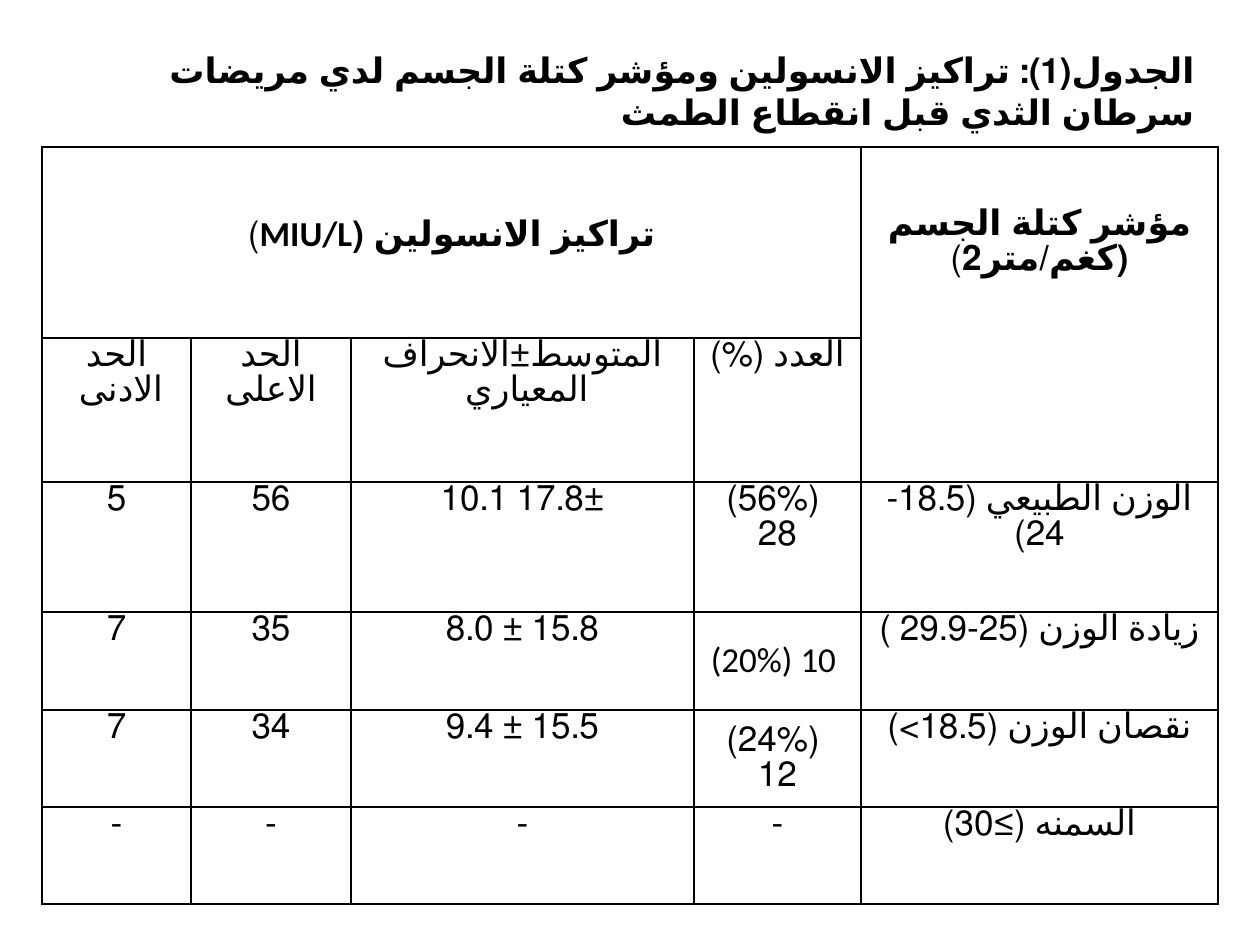
from pptx import Presentation
from pptx.dml.color import RGBColor
from pptx.enum.lang import MSO_LANGUAGE_ID as Language
from pptx.enum.text import MSO_ANCHOR as Anchor, MSO_AUTO_SIZE as AutoSize, PP_ALIGN as Align
from pptx.oxml import parse_xml
from pptx.oxml.ns import nsdecls
from pptx.util import Emu, Pt

BLACK = RGBColor(0x00, 0x00, 0x00)
FONT = "Calibri"
TEXT_SIZE = 20
PX_PER_INCH = 126

TITLE = "الجدول(1): تراكيز الانسولين ومؤشر كتلة الجسم لدي مريضات سرطان الثدي قبل انقطاع الطمث"
INSULIN_HEADER = "تراكيز الانسولين (MIU/L"
BMI_HEADER = "مؤشر كتلة الجسم (كغم/متر2"
LTR_TEXT = "(20%) 10 "
CENTRED_TEXTS = (LTR_TEXT, " (24%) 12")

COLUMN_WIDTHS = [149, 160, 343, 167, 357]
ROW_HEIGHTS = [191, 141, 130, 98, 97, 97]
BODY_ROWS = [
    ["الحد الادنى ", "الحد الاعلى", "المتوسط±الانحراف المعياري ", "العدد (%)", ""],
    ["5", "56", "17.8± 10.1", " (56%) 28", "الوزن الطبيعي (18.5- 24)"],
    ["7", "35", "15.8 ± 8.0", LTR_TEXT, "زيادة الوزن (25-29.9 )"],
    ["7", "34", "15.5 ± 9.4", " (24%) 12", "نقصان الوزن (18.5>)"],
    ["-", "-", "-", "-", "السمنه (≥30)"],
]


def px(length):
    return Emu(round(length * 914400 / PX_PER_INCH))


def style_span(span, bold=False):
    font = span.font
    font.size = Pt(TEXT_SIZE)
    font.name = FONT
    font.bold = bold
    font.color.rgb = BLACK
    font.language_id = Language.ARABIC_IRAQ


def set_rtl(para):
    para._p.get_or_add_pPr().set("rtl", "1")


def add_borders(cell):
    properties = cell._tc.get_or_add_tcPr()
    for index, side in enumerate(("lnL", "lnR", "lnT", "lnB")):
        line = parse_xml(
            f'<a:{side} {nsdecls("a")} w="{Pt(1)}"><a:solidFill>'
            f'<a:srgbClr val="{BLACK}"/></a:solidFill></a:{side}>'
        )
        properties.insert(index, line)


def format_cell(cell):
    cell.fill.background()
    cell.margin_left = cell.margin_right = px(9)
    cell.margin_top = cell.margin_bottom = 0
    add_borders(cell)


def write_cell(cell, text):
    para = cell.text_frame.paragraphs[0]
    para.text = text
    para.alignment = Align.CENTER
    para.line_spacing = 1.0
    para.space_after = Pt(10)
    if text != LTR_TEXT:
        set_rtl(para)
    if text in CENTRED_TEXTS:
        para.space_after = Pt(0)
        cell.vertical_anchor = Anchor.MIDDLE
    for span in para.runs:
        style_span(span)
    return para


def write_header(cell, text, margin):
    cell.margin_top = px(margin)
    para = write_cell(cell, text)
    para.runs[0].font.bold = True
    closing = para.add_run()
    closing.text = ")"
    style_span(closing)


def place_title(page, left, top, width, height):
    title = page.shapes.title
    title.left, title.top, title.width, title.height = map(px, (left, top, width, height))
    frame = title.text_frame
    frame.text = TITLE
    frame.word_wrap = True
    frame.auto_size = AutoSize.SHAPE_TO_FIT_TEXT
    frame.vertical_anchor = Anchor.TOP
    para = frame.paragraphs[0]
    para.alignment = Align.RIGHT
    set_rtl(para)
    style_span(para.runs[0], bold=True)


def place_table(page, left, top):
    table = page.shapes.add_table(
        len(ROW_HEIGHTS), len(COLUMN_WIDTHS), px(left), px(top),
        px(sum(COLUMN_WIDTHS)), px(sum(ROW_HEIGHTS)),
    ).table
    table.first_row = table.horz_banding = False
    for column, width in zip(table.columns, COLUMN_WIDTHS):
        column.width = px(width)
    for row, height in zip(table.rows, ROW_HEIGHTS):
        row.height = px(height)
    for cell in table.iter_cells():
        format_cell(cell)
    table.cell(0, 0).merge(table.cell(0, 3))
    table.cell(0, 4).merge(table.cell(1, 4))
    write_header(table.cell(0, 0), INSULIN_HEADER, 66)
    write_header(table.cell(0, 4), BMI_HEADER, 60)
    for row, texts in enumerate(BODY_ROWS, start=1):
        for column, text in enumerate(texts):
            if text:
                write_cell(table.cell(row, column), text)


def main():
    deck = Presentation()
    deck.slide_width, deck.slide_height = px(1260), px(945)
    page = deck.slides.add_slide(deck.slide_layouts[5])
    place_table(page, 42, 147)
    place_title(page, 73, 42, 1134, 55)
    deck.save("out.pptx")


if __name__ == "__main__":
    main()
